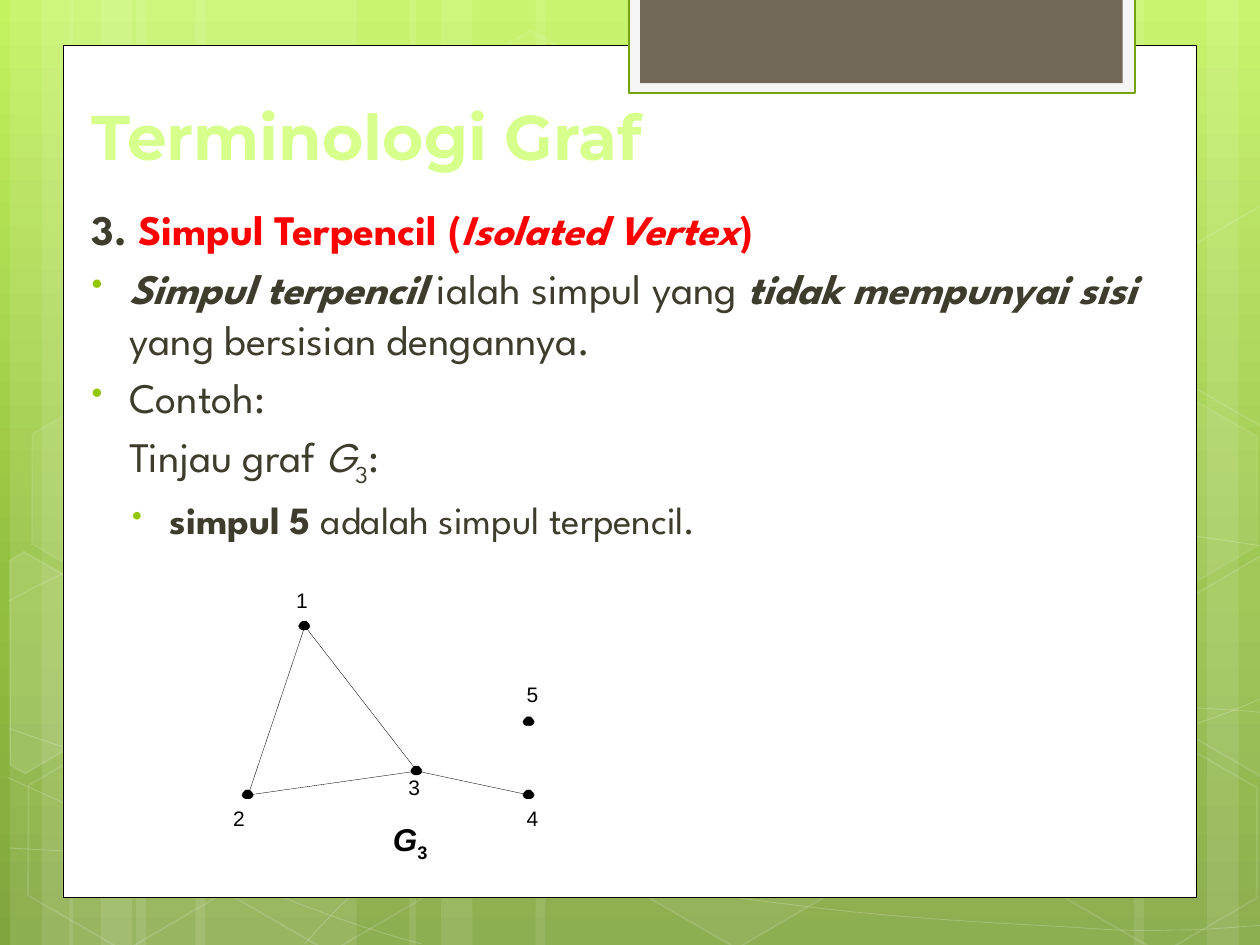
"""Builds the isolated-vertex slide of a graph terminology lecture."""
from copy import deepcopy
from dataclasses import dataclass

from lxml import etree
from pptx import Presentation
from pptx import util as u
from pptx.dml.color import RGBColor
from pptx.enum import shapes, text
from pptx.oxml.ns import qn


@dataclass(frozen=True)
class Theme:
    sky: tuple = (("C3F35F", 0), ("93BF3F", 0.62), ("81A53E", 1))
    white: str = "FFFFFF"
    black: str = "000000"
    tab: str = "71685A"
    tab_frame: str = "F5F5F5"
    tab_line: str = "74A510"
    title: str = "D6FF8C"
    body: str = "3E3D2D"
    term: str = "FF0000"
    bullet: str = "94C600"
    title_font: str = "Montserrat"
    body_font: str = "League Spartan"
    graph_font: str = "Arial"
    title_size: float = 36
    body_size: float = 24
    sub_size: float = 22
    name_size: float = 18
    label_size: float = 12


def inch(value):
    return u.Cm(value * 2.54)


def bezier(start, b, c, end, steps=12):
    for step in range(1, steps + 1):
        t = step / steps
        s = 1 - t
        weights = (s**3, 3 * s * s * t, 3 * s * t * t, t**3)
        yield tuple(sum(w * p[axis] for w, p in zip(weights, (start, b, c, end))) for axis in (0, 1))


class Canvas:
    def __init__(self, page, theme):
        self.page, self.theme = page, theme
        self.shapes = page.shapes

    def group(self):
        self.shapes = self.page.shapes.add_group_shape().shapes

    def ungroup(self):
        self.shapes = self.page.shapes

    def background(self):
        fill = self.page.background.fill
        fill.gradient()
        stops = self.page.element.find(".//" + qn("a:gsLst"))
        stops.append(deepcopy(stops[-1]))
        fill.gradient_angle = 270
        for stop, (colour, position) in zip(fill.gradient_stops, self.theme.sky):
            stop.color.rgb = RGBColor.from_string(colour)
            stop.position = position

    def paint(self, shape, fill=None, line=None, width=1, fill_alpha=None, line_alpha=None):
        shape.shadow.inherit = False
        for target, colour in ((shape.fill, fill), (shape.line.fill, line)):
            if colour:
                target.solid()
                target.fore_color.rgb = RGBColor.from_string(colour)
            else:
                target.background()
        if line:
            shape.line.width = u.Pt(width)
        for route, alpha in (("a:solidFill", fill_alpha), ("a:ln/a:solidFill", line_alpha)):
            if alpha:
                colour = shape.element.spPr.find("/".join(map(qn, route.split("/"))))[0]
                etree.SubElement(colour, qn("a:alpha")).set("val", str(alpha * 1000))

    def preset(self, kind, at, rotation=0, adjust=None, **style):
        shape = self.shapes.add_shape(kind, *map(inch, at))
        shape.rotation = rotation
        if adjust:
            shape.adjustments[0] = adjust
        self.paint(shape, **style)

    def outline(self, points, close=True, **style):
        (x, y), *rest = [(inch(x), inch(y)) for x, y in points]
        builder = self.shapes.build_freeform(x, y)
        builder.add_line_segments(rest, close=close)
        self.paint(builder.convert_to_shape(), **style)

    def curve(self, points, **style):
        trail = [points[0]]
        for i in range(0, len(points) - 1, 3):
            trail += bezier(*points[i:i + 4])
        self.outline(trail, close=False, **style)

    def edge(self, start, end):
        line = self.shapes.add_connector(shapes.MSO_CONNECTOR.STRAIGHT, *map(inch, start + end))
        line.line.color.rgb = RGBColor.from_string(self.theme.black)
        line.line.width = u.Pt(0.2)
        etree.SubElement(line.element.spPr, qn("a:effectLst"))

    def text_box(self, at, wrap=True, inset=True, anchor=text.MSO_ANCHOR.TOP):
        frame = self.shapes.add_textbox(*map(inch, at)).text_frame
        frame.word_wrap = wrap
        frame.vertical_anchor = anchor
        if not inset:
            frame.margin_left = frame.margin_right = frame.margin_top = frame.margin_bottom = 0
        return frame

    def runs(self, para, spans, font, size, colour):
        for words, look in spans:
            span = para.add_run()
            span.text = words
            span.font.name, span.font.size = font, u.Pt(size)
            span.font.bold, span.font.italic = "b" in look, "i" in look
            span.font.color.rgb = RGBColor.from_string(self.theme.term if "t" in look else colour)
            if "_" in look:
                span.font._element.set("baseline", "-25000")

    def body_line(self, para, spans, level=0, bullet=False, hanging=True):
        theme = self.theme
        para.level = level
        para.space_before = u.Pt(4.8)
        props = para._p.get_or_add_pPr()
        props.set("marL", str(inch((0.38, 0.7)[level])))
        props.set("indent", str(inch(-0.3 if hanging else 0)))
        if bullet:
            tint = etree.SubElement(props, qn("a:buClr"))
            etree.SubElement(tint, qn("a:srgbClr")).set("val", theme.bullet)
            etree.SubElement(props, qn("a:buSzPct")).set("val", "76000")
            etree.SubElement(props, qn("a:buChar")).set("char", "•")
        size = theme.sub_size if level else theme.body_size
        self.runs(para, spans, theme.body_font, size, theme.body)


BANDS = ((1.08, 1.75, 0), (0.08, 0.5, 0), (0.33, 0.83, 0), (1.55, 1.75, 0), (0.55, 0.5, 0), (0.8, 0.83, 0),
         (7.33, 1.75, 180), (9.58, 0.5, 180), (9, 0.83, 180), (4.25, 3.08, 0), (3.25, 0.5, 0), (3.5, 0.83, 0))
CURVES = (
    ((0.07, 6.73), (0.61, 6.76), (1.15, 6.79), (1.9, 6.78), (2.65, 6.77), (3.58, 6.75), (4.58, 6.65),
     (5.58, 6.55), (7, 6.36), (7.92, 6.17), (8.83, 5.98), (9.77, 5.68), (10.07, 5.51)),
    ((0.07, 4.77), (0.36, 4.61), (0.65, 4.46), (1.21, 4.31), (1.78, 4.16), (2.59, 3.94), (3.47, 3.87),
     (4.36, 3.8), (5.44, 3.79), (6.54, 3.87), (7.64, 3.95), (9.47, 4.26), (10.07, 4.34)),
    ((0.06, 6.17), (1.27, 6.72), (2.47, 7.27), (3.34, 7.49)),
    ((0.07, 5.78), (0.38, 5.89), (0.7, 6), (1.28, 6.16), (1.86, 6.31), (2.73, 6.56), (3.57, 6.73),
     (4.4, 6.9), (5.45, 7.08), (6.28, 7.18), (7.11, 7.29), (8, 7.33), (8.53, 7.36),
     (9.05, 7.4), (9.19, 7.38), (9.45, 7.38), (9.71, 7.37), (9.89, 7.35), (10.07, 7.34)),
    ((2.42, 7.49), (2.6, 7.29), (2.78, 7.09), (3.02, 6.91), (3.26, 6.73), (3.6, 6.53), (3.88, 6.39),
     (4.16, 6.25), (4.33, 6.19), (4.7, 6.09), (5.06, 5.99), (5.73, 5.85), (6.08, 5.78),
     (6.44, 5.71), (6.49, 5.71), (6.8, 5.69), (7.11, 5.66), (7.6, 5.63), (7.94, 5.62),
     (8.29, 5.61), (8.86, 5.62), (8.86, 5.62), (9.08, 5.62), (9.31, 5.62), (9.53, 5.62),
     (9.71, 5.63), (9.88, 5.64), (9.97, 5.65), (10.06, 5.66), (10.03, 5.65), (10.06, 5.66)))
CUT_HEXAGONS = (
    (((0.08, 4.45), (0.19, 4.38), (0.96, 4.82), (0.95, 5.7), (0.2, 6.14), (0.08, 6.07)), 10),
    (((9.26, 4.85), (10.01, 4.41), (10.09, 4.46), (10.09, 6.13), (10.02, 6.17), (9.26, 5.73)), 4),
    (((9.26, 2.07), (10.01, 1.63), (10.1, 1.68), (10.09, 3.35), (10.02, 3.39), (9.26, 2.95)), 0))
HEXAGONS = ((3.34, 0.36, 4, 8), (4.97, 5.89, 6, 12), (0.11, 5.91, 0, 12), (0.14, 3.12, 7, 8), (1.74, 5.92, 0, 12),
            (7.53, 4.53, 10, 12), (8.34, 5.93, 0, 12), (8.34, 3.14, 7, 8))
BODY = (
    ([("3. ", "b"), ("Simpul Terpencil (", "bt"), ("Isolated Vertex", "bit"), (")", "bt")], {}),
    ([("Simpul terpencil ", "bi"), ("ialah simpul yang ", ""), ("tidak mempunyai sisi ", "bi"),
      ("yang bersisian dengannya.", "")], {"bullet": True}),
    ([("Contoh:", "")], {"bullet": True}),
    ([("Tinjau graf ", ""), ("G", "i"), ("3", "_"), (":", "")], {"hanging": False}),
    ([("simpul 5 ", "b"), ("adalah simpul terpencil.", "")], {"level": 1, "bullet": True}))
VERTICES = {"1": (2.42, 4.97), "2": (1.97, 6.31), "3": (3.31, 6.12), "4": (4.2, 6.31), "5": (4.2, 5.73)}
LABELS = {"1": (2.35, 4.66), "2": (1.85, 6.39), "3": (3.24, 6.15), "4": (4.18, 6.39), "5": (4.18, 5.41)}
EDGES = ("12", "34", "23", "13")
DOT = ((-0.05, 0), (-0.04, -0.02), (-0.02, -0.04), (0.01, -0.04), (0.03, -0.02),
       (0.04, 0), (0.03, 0.02), (0.01, 0.03), (-0.02, 0.03), (-0.04, 0.02))


def draw_backdrop(canvas, theme):
    kinds = shapes.MSO_SHAPE
    canvas.background()
    canvas.group()
    for left, width, turn in BANDS:
        canvas.preset(kinds.RECTANGLE, (left, 0, width, 7.5), turn, fill=theme.white, fill_alpha=10)
    for points in CURVES:
        canvas.curve(points, line=theme.white, width=0.5, line_alpha=20)
    for points, alpha in CUT_HEXAGONS:
        canvas.outline(points, fill=alpha and theme.white, fill_alpha=alpha, line=theme.white, line_alpha=12)
    for left, top, alpha, line_alpha in HEXAGONS:
        canvas.preset(kinds.HEXAGON, (left, top, 1.75, 1.52), 30, 0.285, fill=alpha and theme.white,
                      fill_alpha=alpha, line=theme.white, line_alpha=line_alpha)
    canvas.ungroup()
    canvas.preset(kinds.RECTANGLE, (0.5, 0.36, 9, 6.76), fill=theme.white, line=theme.black, width=0.5)
    canvas.preset(kinds.RECTANGLE, (4.99, -0.02, 4.02, 0.76), fill=theme.tab_frame, line=theme.tab_line, width=1.25)
    canvas.preset(kinds.RECTANGLE, (5.08, -0.02, 3.83, 0.68), fill=theme.tab)


def draw_text(canvas, theme):
    title = canvas.text_box((0.63, 0.92, 7.68, 0.5), anchor=text.MSO_ANCHOR.BOTTOM)
    canvas.runs(title.paragraphs[0], [("Terminologi Graf", "b")], theme.title_font, theme.title_size, theme.title)
    body = canvas.text_box((0.55, 1.57, 8.83, 3.84))
    for index, (spans, layout) in enumerate(BODY):
        para = body.add_paragraph() if index else body.paragraphs[0]
        canvas.body_line(para, spans, **layout)


def draw_graph(canvas, theme):
    canvas.group()
    for x, y in VERTICES.values():
        canvas.outline([(x + dx, y + dy) for dx, dy in DOT], fill=theme.black, line=theme.black, width=0.2)
    for start, end in EDGES:
        canvas.edge(VERTICES[start], VERTICES[end])
    for name, place in LABELS.items():
        label = canvas.text_box((*place, 0.25, 0.31), inset=False)
        canvas.runs(label.paragraphs[0], [(name, "")], theme.graph_font, theme.label_size, theme.black)
    caption = canvas.text_box((3.02, 6.46, 0.49, 0.4), wrap=False)
    caption.auto_size = text.MSO_AUTO_SIZE.SHAPE_TO_FIT_TEXT
    canvas.runs(caption.paragraphs[0], [("G", "bi"), ("3", "b_")], theme.graph_font, theme.name_size, theme.black)
    canvas.ungroup()


def main():
    deck = Presentation()
    deck.slide_width, deck.slide_height = u.Cm(25.4), u.Cm(19.05)
    theme = Theme()
    canvas = Canvas(deck.slides.add_slide(deck.slide_layouts[6]), theme)
    for draw in (draw_backdrop, draw_text, draw_graph):
        draw(canvas, theme)
    deck.save("out.pptx")


if __name__ == "__main__":
    main()
